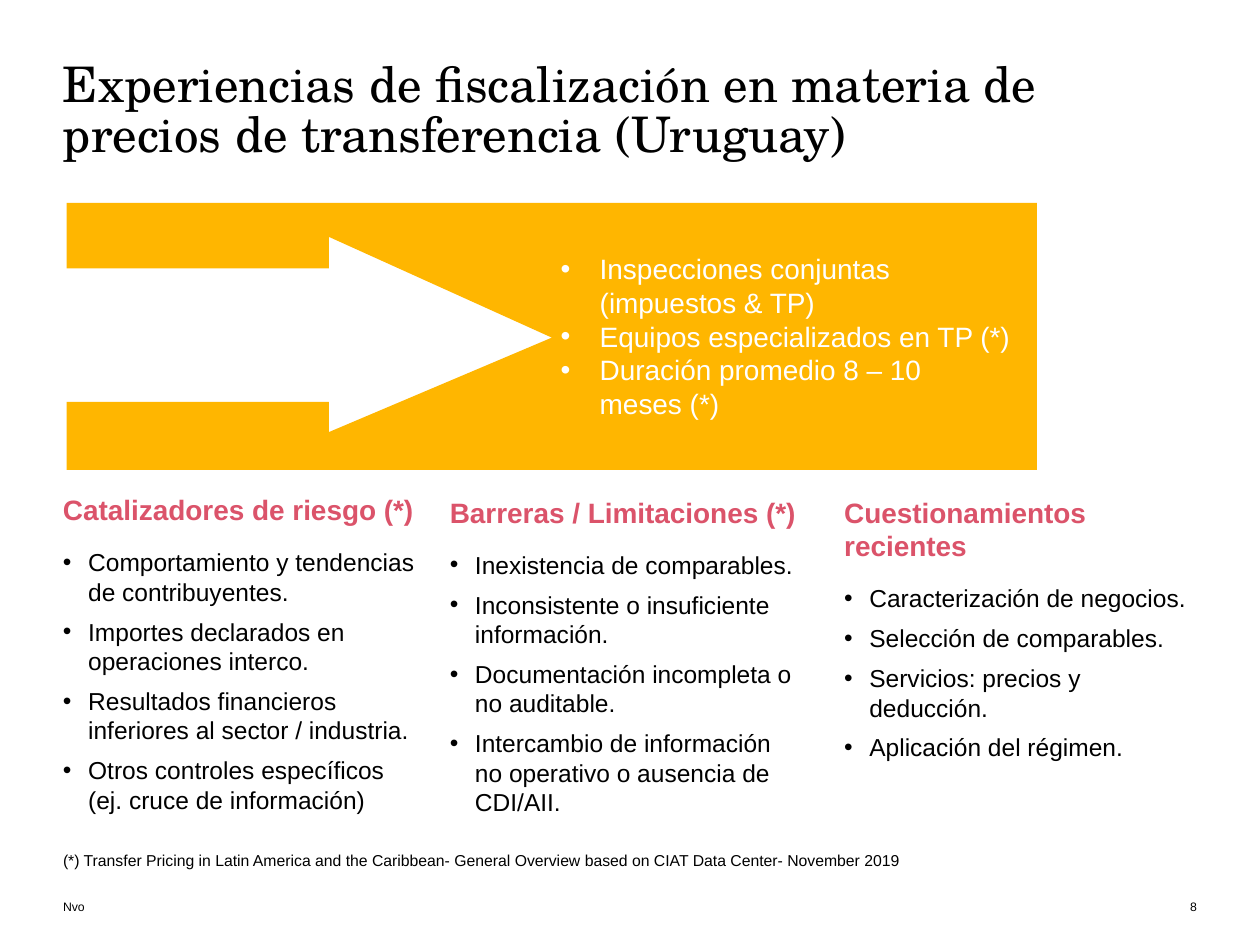
from copy import deepcopy
from dataclasses import dataclass

from lxml.etree import SubElement as Sub
from pptx import Presentation as Deck
from pptx.dml.color import RGBColor as Rgb
from pptx.enum.shapes import MSO_SHAPE as Kind
from pptx.enum.text import MSO_ANCHOR as Anchor, PP_ALIGN as Align
from pptx.oxml.ns import qn
from pptx.util import Inches, Pt

COLS, ROWS = 100, 75
CELL = Inches(0.1)


@dataclass(frozen=True)
class Theme:
    ink: str = "000000"
    gold: str = "FFB600"
    rose: str = "DB536A"
    white: str = "FFFFFF"
    serif: str = "TeX Gyre Schola"
    sans: str = "Arial"
    title: int = 28
    head: int = 16
    body: int = 14
    note: int = 9
    foot: int = 7


T = Theme()
LEFT, WIDE = 5, 28
STARTS = (5, 35.7, 67)
TOPS = (39.1, 39.3, 39.3)
TOPICS = (
    ("Catalizadores de riesgo (*)",
     ("Comportamiento y tendencias de contribuyentes.",
      "Importes declarados en operaciones interco.",
      "Resultados financieros inferiores al sector / industria.",
      "Otros controles específicos (ej. cruce de información)")),
    ("Barreras / Limitaciones (*)",
     ("Inexistencia de comparables.",
      "Inconsistente o insuficiente información.",
      "Documentación incompleta o no auditable.",
      "Intercambio de información no operativo o ausencia de CDI/AII.")),
    ("Cuestionamientos recientes",
     ("Caracterización de negocios.",
      "Selección de comparables.",
      "Servicios: precios y deducción.",
      "Aplicación del régimen.")),
)
POINTS = ("Inspecciones conjuntas \n(impuestos & TP)",
          "Equipos especializados en TP (*)",
          "Duración promedio 8 – 10 \nmeses (*)")
NOTE = ("(*) Transfer Pricing in Latin America and the Caribbean- "
        "General Overview based on CIAT Data Center- November 2019")


def grid(*cells):
    return [round(c * CELL) for c in cells]


def put(item, form):
    for key, value in form.items():
        setattr(item, key, value)


def frame(shape, **form):
    text = shape.text_frame
    base = dict(margin_left=0, margin_top=0, margin_right=0, margin_bottom=0,
                word_wrap=True, vertical_anchor=Anchor.TOP)
    put(text, base | form)
    return text


def box(slide, place, **form):
    return frame(slide.shapes.add_textbox(*grid(*place)), **form)


def line(text, words, size, color=T.ink, face=T.sans, bold=False, **form):
    para = text.paragraphs[0]
    if para.runs:
        para = text.add_paragraph()
    para.text = words
    put(para, dict(alignment=Align.LEFT) | form)
    for run in para.runs:
        put(run.font, dict(size=Pt(size), name=face, bold=bold))
        run.font.color.rgb = Rgb.from_string(color)
    for gap in para._p.findall(qn("a:br")):
        gap.append(deepcopy(para.runs[0]._r.rPr))
    return para


def bullet(para, dent):
    props = para._p.get_or_add_pPr()
    props.set("marL", str(Inches(dent)))
    props.set("indent", str(-Inches(dent)))
    Sub(props, qn("a:buFont"), typeface=T.sans)
    Sub(props, qn("a:buChar"), char="•")


def paint(shape, color):
    shape.shadow.inherit = False
    shape.fill.solid()
    shape.fill.fore_color.rgb = Rgb.from_string(color)
    shape.line.fill.background()


def banner(slide):
    left, neck, tip, right = 5.3, 26.1, 43.8, 82.3
    top, base = 16.1, 37.3
    spots = [(right, top), (right, base), (left, base), (left, 31.9),
             (neck, 31.9), (neck, 34.3), (tip, 26.8), (neck, 18.8),
             (neck, 21.3), (left, 21.3)]
    path = slide.shapes.build_freeform(*grid(left, top))
    path.add_line_segments([grid(*s) for s in spots], close=True)
    paint(path.convert_to_shape(), T.gold)
    panel = slide.shapes.add_shape(Kind.RECTANGLE, *grid(44.5, 20, 37.8, 13.5))
    paint(panel, T.gold)
    text = frame(panel)
    for point in POINTS:
        bullet(line(text, point, T.head, T.white), 0.31)


def topic(slide, left, top, head, items):
    text = box(slide, (left, top, WIDE, 26))
    line(text, head, T.head, T.rose, bold=True, space_after=Pt(12))
    for item in items:
        bullet(line(text, item, T.body, space_after=Pt(6)), 0.2)


def main():
    deck = Deck()
    put(deck, dict(slide_width=COLS * CELL, slide_height=ROWS * CELL))
    slide = deck.slides.add_slide(deck.slide_layouts[6])
    line(box(slide, (LEFT, 5, 90, 15)),
         "Experiencias de fiscalización en materia de "
         "precios de transferencia (Uruguay)",
         T.title, face=T.serif, line_spacing=0.85)
    banner(slide)
    for left, top, (head, items) in zip(STARTS, TOPS, TOPICS):
        topic(slide, left, top, head, items)
    line(box(slide, (LEFT, 67.5, 67.2, 1.5), word_wrap=False), NOTE, T.note)
    low = dict(vertical_anchor=Anchor.BOTTOM)
    line(box(slide, (LEFT, 71, 43.5, 1.5), **low), "Nvo", T.foot)
    line(box(slide, (81, 71, 14, 1.5), **low), "8", T.foot,
         alignment=Align.RIGHT)
    deck.save("out.pptx")


if __name__ == "__main__":
    main()
